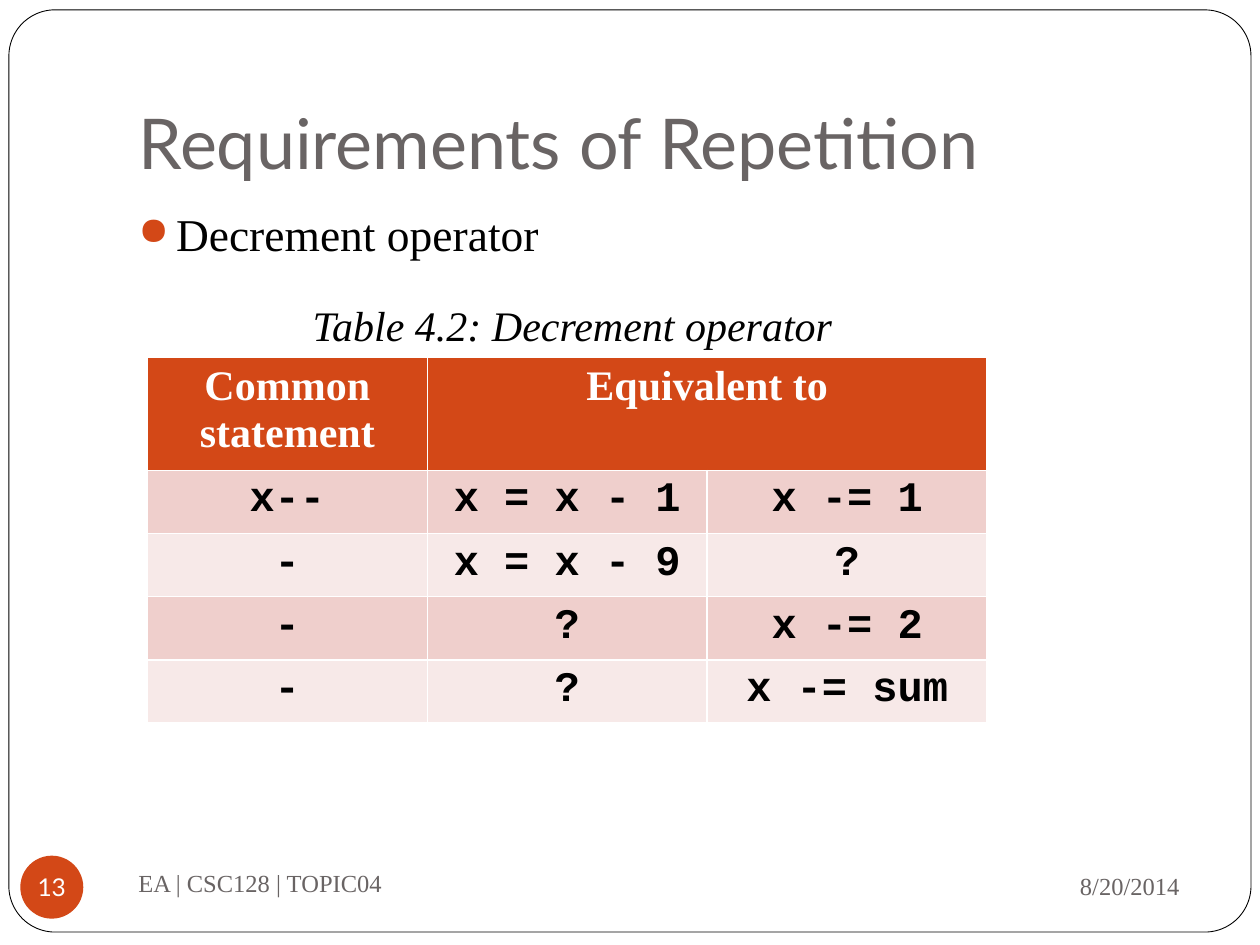
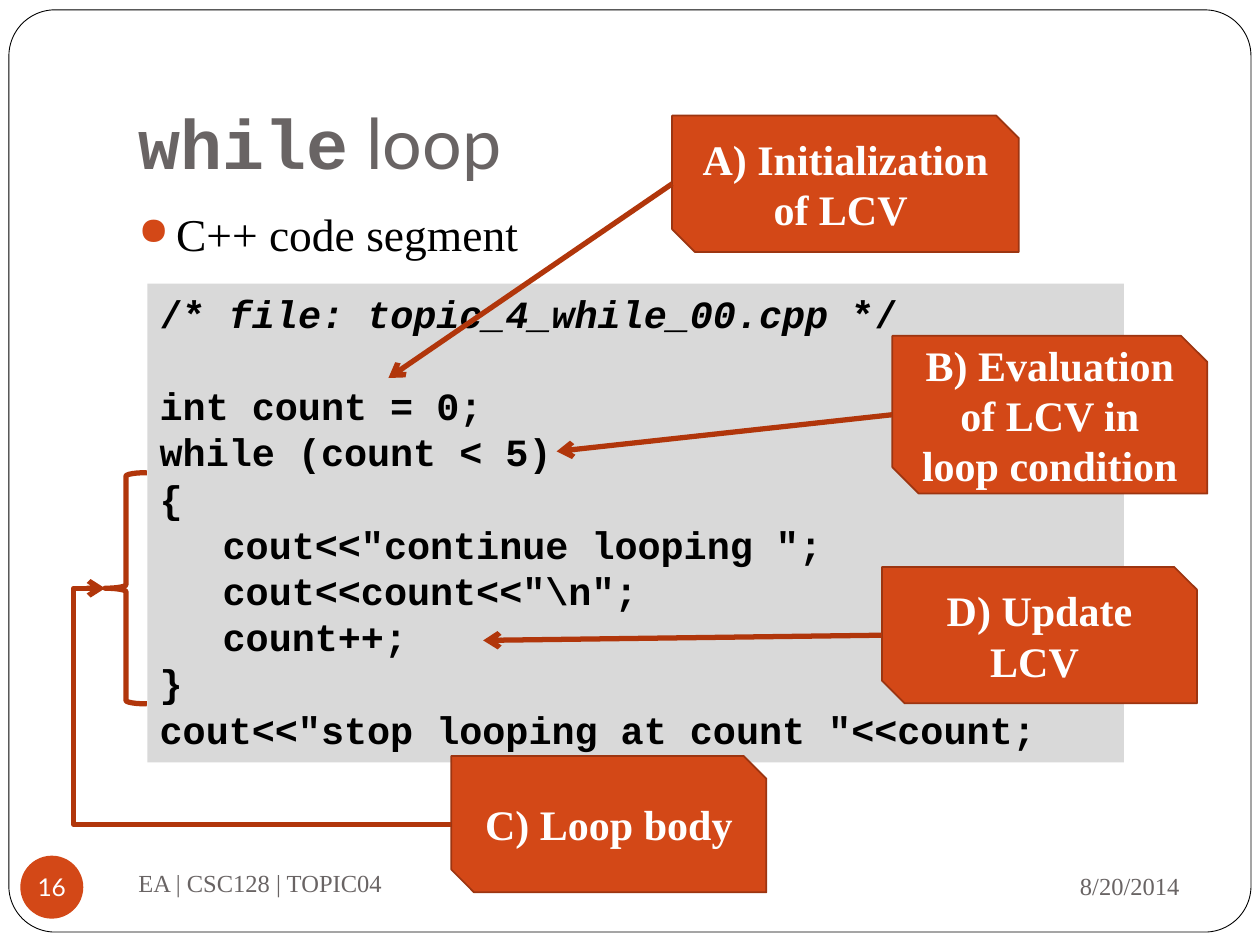
from lxml.etree import SubElement
from pptx import Presentation
from pptx.dml.color import RGBColor
from pptx.enum.shapes import MSO_CONNECTOR as Link, MSO_SHAPE as Shape
from pptx.enum.text import MSO_ANCHOR as Anchor, MSO_AUTO_SIZE as Fit, PP_ALIGN as Align
from pptx.oxml.ns import qn
from pptx.util import Cm, Pt

COLORS = {
    "paper": "FFFFFF", "ink": "000000", "muted": "696464",
    "accent": "D34817", "callout_edge": "9C3511", "arrow": "B1360B",
    "code": "D9D9D9", "band_dark": "EFCFCC", "band_light": "F7E9E8",
}
SERIF, SANS, MONO = "Times New Roman", "Lato", "Courier New"

FOOTER = "EA | CSC128 | TOPIC04"
DATE = "8/20/2014"

OPERATOR_SLIDE = {
    "title": [("Requirements of Repetition", SANS, False)],
    "bullet": "Decrement operator",
    "number": "13",
}
CAPTION = "Table 4.2: Decrement operator"
OPERATORS = [
    ["Common statement", "Equivalent to", ""],
    ["x--", "x = x - 1", "x -= 1"],
    ["-", "x = x - 9", "?"],
    ["-", "?", "x -= 2"],
    ["-", "?", "x -= sum"],
]

LOOP_SLIDE = {
    "title": [("while", MONO, True), (" loop", SANS, False)],
    "bullet": "C++ code segment",
    "number": "16",
}
CODE_COMMENT = [("/* ", False), ("file: topic_4_while_00.cpp", True), (" */", False)]
CODE_LINES = [
    "int count = 0;",
    "while (count < 5)",
    "{",
    '\tcout<<"continue looping ";',
    '\tcout<<count<<"\\n";',
    "\tcount++;",
    "}",
    'cout<<"stop looping at count "<<count;',
]
CODE_PITCH = 26.4
BRACE = (2.12, 9.53, 0.84, 4.66)
BRACE_TIP = (BRACE[0], BRACE[1] + BRACE[3] / 2)
CALLOUTS = [
    ("A) Initialization of LCV ", (13.55, 2.33, 6.99, 2.75), (7.83, 7.62), Link.STRAIGHT),
    ("B) Evaluation of LCV in loop condition", (17.99, 6.77, 6.35, 3.18), (11.22, 9.1), Link.STRAIGHT),
    ("D) Update LCV ", (17.78, 11.43, 6.35, 2.75), (9.74, 12.91), Link.STRAIGHT),
    ("C) Loop body", (9.1, 15.24, 6.35, 2.75), BRACE_TIP, Link.ELBOW),
]


def rgb(color):
    return RGBColor.from_string(COLORS[color])


def cms(lengths):
    return [Cm(length) for length in lengths]


def style_run(run, size, font=SERIF, color="ink", bold=False, italic=False):
    run.font.size, run.font.name = Pt(size), font
    run.font.color.rgb = rgb(color)
    run.font.bold, run.font.italic = bold, italic


def write(frame, text, size, align=Align.LEFT, anchor=Anchor.TOP, **look):
    frame.text = text
    frame.word_wrap = True
    frame.vertical_anchor = anchor
    paragraph = frame.paragraphs[0]
    paragraph.alignment = align
    style_run(paragraph.runs[0], size, **look)
    return paragraph


def add_label(slide, box, text, size, **look):
    label = slide.shapes.add_textbox(*cms(box))
    return write(label.text_frame, text, size, **look)


def add_figure(slide, kind, box, fill=None, line=None, width=1):
    figure = slide.shapes.add_shape(kind, *cms(box))
    figure.shadow.inherit = False
    if fill:
        figure.fill.solid()
        figure.fill.fore_color.rgb = rgb(fill)
    else:
        figure.fill.background()
    if line:
        figure.line.color.rgb = rgb(line)
        figure.line.width = Pt(width)
    else:
        figure.line.fill.background()
    return figure


def add_bullet(paragraph):
    paragraph.space_before = Pt(5.8)
    props = paragraph._p.get_or_add_pPr()
    props.set("marL", str(Cm(0.76)))
    props.set("indent", str(-Cm(0.76)))
    color = SubElement(props, qn("a:buClr"))
    SubElement(color, qn("a:srgbClr"), val=COLORS["accent"])
    SubElement(props, qn("a:buSzPct"), val="85000")
    SubElement(props, qn("a:buChar"), char="●")


def set_title(title, parts):
    title.left, title.top, title.width, title.height = cms((2.54, 0.76, 21.59, 3.18))
    frame = title.text_frame
    frame.auto_size = Fit.NONE
    frame.vertical_anchor = Anchor.BOTTOM
    frame.margin_bottom = Cm(0.25)
    paragraph = frame.paragraphs[0]
    paragraph.alignment = Align.LEFT
    for text, font, bold in parts:
        run = paragraph.add_run()
        run.text = text
        style_run(run, 40, font, "muted", bold)


def start_slide(deck, content):
    slide = deck.slides.add_slide(deck.slide_layouts[5])
    title = slide.shapes.title
    set_title(title, content["title"])
    border = add_figure(slide, Shape.ROUNDED_RECTANGLE, (0.18, 0.2, 25.04, 18.59), "paper", "ink", 0.5)
    border.adjustments[0] = 0.05
    title.element.addprevious(border.element)
    add_bullet(add_label(slide, (2.54, 4.02, 21.59, 1.5), content["bullet"], 26))
    add_label(slide, (17.15, 17.2, 6.88, 1.32), DATE, 14,
              align=Align.RIGHT, anchor=Anchor.MIDDLE, color="muted")
    add_label(slide, (2.54, 17.15, 11, 1.27), FOOTER, 14, anchor=Anchor.MIDDLE, color="muted")
    badge = add_figure(slide, Shape.OVAL, (0.41, 17.25, 1.27, 1.27), "accent").text_frame
    write(badge, content["number"], 14, Align.CENTER, Anchor.MIDDLE, font=SANS, color="paper")
    badge.word_wrap = False
    badge.margin_left = badge.margin_right = badge.margin_top = badge.margin_bottom = 0
    return slide


def add_operator_table(slide):
    heights = [2.1] + [1.21] * (len(OPERATORS) - 1)
    table = slide.shapes.add_table(len(OPERATORS), len(OPERATORS[0]),
                                   *cms((2.97, 7.2, 16.93, sum(heights)))).table
    for row, height in zip(table.rows, heights):
        row.height = Cm(height)
    for r, texts in enumerate(OPERATORS):
        fill = "accent" if r == 0 else ("band_light", "band_dark")[r % 2]
        font, color = (SERIF, "paper") if r == 0 else (MONO, "ink")
        for c, text in enumerate(texts):
            cell = table.cell(r, c)
            cell.fill.solid()
            cell.fill.fore_color.rgb = rgb(fill)
            if text:
                write(cell.text_frame, text, 24, Align.CENTER, font=font, color=color, bold=True)
    table.cell(0, 1).merge(table.cell(0, 2))


def add_code(slide):
    frame = add_figure(slide, Shape.RECTANGLE, (2.97, 5.72, 19.69, 9.65), "code").text_frame
    frame.word_wrap = True
    frame.vertical_anchor = Anchor.TOP
    heading = frame.paragraphs[0]
    for text, italic in CODE_COMMENT:
        run = heading.add_run()
        run.text = text
        style_run(run, 22, MONO, bold=True, italic=italic)
    for text in CODE_LINES:
        line = frame.add_paragraph()
        line.text = text
        style_run(line.runs[0], 22, MONO, bold=True)
    for line in frame.paragraphs:
        line.alignment = Align.LEFT
        line.line_spacing = Pt(CODE_PITCH)
    frame.paragraphs[1].space_before = Pt(CODE_PITCH)


def add_arrow(slide, kind, start, end):
    arrow = slide.shapes.add_connector(kind, *cms(start + end))
    arrow.line.color.rgb = rgb("arrow")
    arrow.line.width = Pt(3)
    props = arrow.element.spPr
    SubElement(props.find(qn("a:ln")), qn("a:tailEnd"), type="arrow")
    SubElement(props, qn("a:effectLst"))
    if kind == Link.ELBOW:
        guides = props.find(qn("a:prstGeom")).find(qn("a:avLst"))
        SubElement(guides, qn("a:gd"), name="adj1", fmla="val 109100")


def add_callouts(slide):
    for text, box, _, _ in CALLOUTS:
        callout = add_figure(slide, Shape.SNIP_2_DIAG_RECTANGLE, box, "accent", "callout_edge")
        paragraph = write(callout.text_frame, text, 24, Align.CENTER, Anchor.MIDDLE,
                          color="paper", bold=True)
        paragraph.line_spacing = Pt(28.8)
    for _, (left, top, _, height), target, kind in CALLOUTS:
        add_arrow(slide, kind, (left, top + height / 2), target)


def main():
    deck = Presentation()
    deck.slide_width, deck.slide_height = Cm(25.4), Cm(19.05)

    operators = start_slide(deck, OPERATOR_SLIDE)
    add_operator_table(operators)
    add_label(operators, (5.93, 5.92, 11.22, 1.27), CAPTION, 24, align=Align.CENTER, italic=True)

    loop = start_slide(deck, LOOP_SLIDE)
    add_code(loop)
    add_figure(loop, Shape.LEFT_BRACE, BRACE, line="arrow", width=3)
    add_callouts(loop)

    deck.save("out.pptx")


if __name__ == "__main__":
    main()
